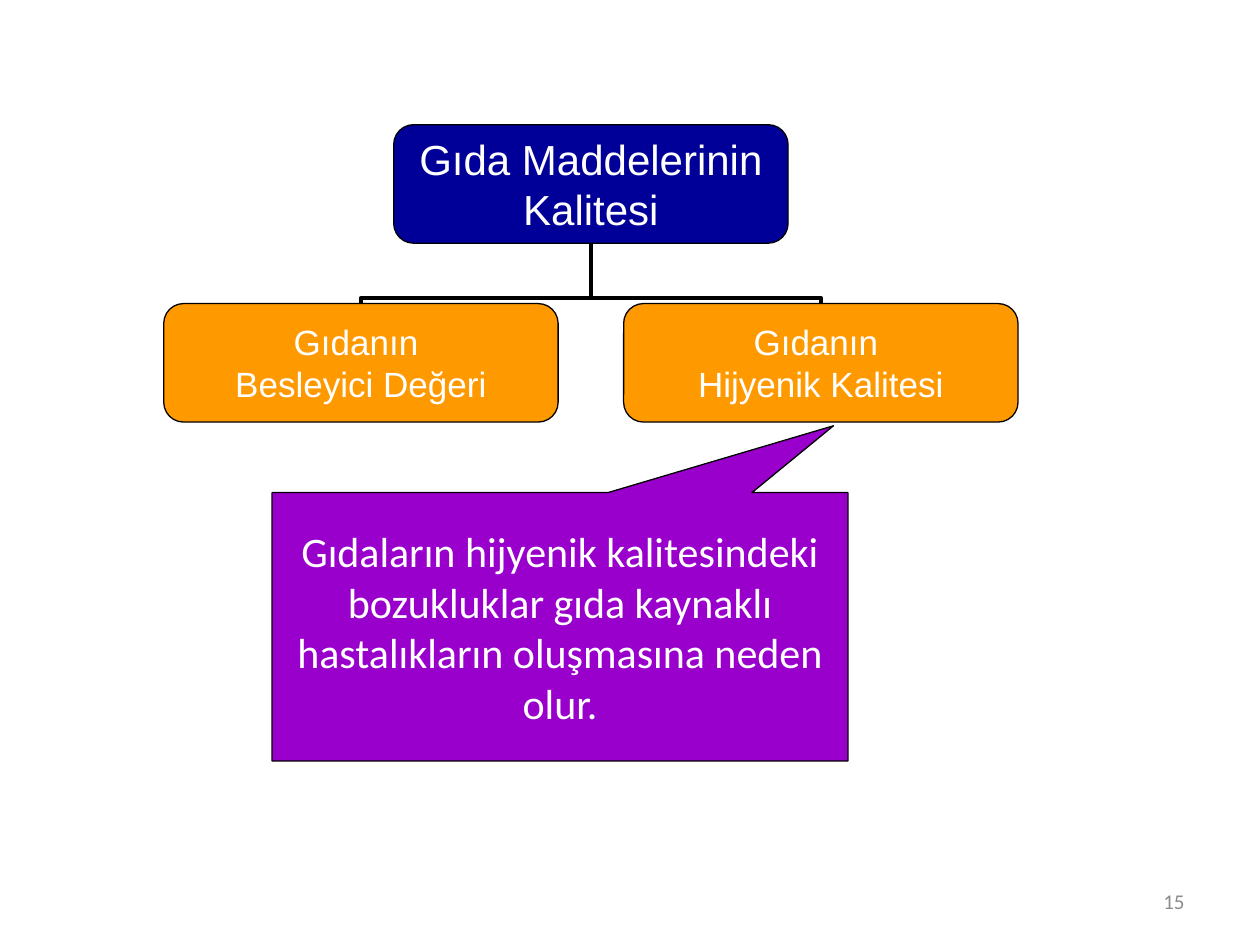
from lxml.etree import SubElement
from pptx import Presentation
from pptx.dml.color import RGBColor
from pptx.enum.shapes import MSO_CONNECTOR, MSO_SHAPE
from pptx.enum.text import MSO_ANCHOR, PP_ALIGN
from pptx.oxml.ns import qn
from pptx.util import Inches, Pt

WIDE, HIGH = 3.13, 0.94      # size of a chart box
LEFT, STEP = 1.3, 3.65       # first box and column pitch
TOP, DROP = 0.99, 1.42       # first row and row pitch


def color(code):
    return RGBColor.from_string(code)


def cell(col, row):
    """Place of a box on the chart grid."""
    return LEFT + col * STEP, TOP + row * DROP, WIDE, HIGH


def write(frame, lines, size, font, ink="FFFFFF", align=PP_ALIGN.CENTER):
    frame.vertical_anchor = MSO_ANCHOR.MIDDLE
    for i, line in enumerate(lines):
        para = frame.paragraphs[0] if i == 0 else frame.add_paragraph()
        para.text = line
        para.alignment = align
        para.font.size = Pt(size)
        para.font.name = font
        para.font.color.rgb = color(ink)


def block(slide, kind, place, fill, adjust):
    shape = slide.shapes.add_shape(kind, *map(Inches, place))
    shape.shadow.inherit = False
    shape.fill.solid()
    shape.fill.fore_color.rgb = color(fill)
    shape.line.color.rgb = color("000000")
    shape.line.width = Pt(0.75)
    for i, value in enumerate(adjust):
        shape.adjustments[i] = value
    shape.text_frame.word_wrap = True
    return shape


def box(slide, place, lines, fill, size):
    shape = block(slide, MSO_SHAPE.ROUNDED_RECTANGLE, place, fill, [0.167])
    frame = shape.text_frame
    frame.margin_left = frame.margin_right = 0
    frame.margin_top = frame.margin_bottom = 0
    frame.word_wrap = False
    write(frame, lines, size, "Arial")


def link(slide, child, parent):
    """Elbow from the top of a child to the foot of its parent."""
    x1, y1 = child[0] + WIDE / 2, child[1]
    x2, y2 = parent[0] + WIDE / 2, parent[1] + HIGH
    midx, midy = (x1 + x2) / 2, (y1 + y2) / 2
    # An elbow starts sideways, so it is laid out turned by a quarter
    across, along = (y1 - y2) / 2, abs(x1 - x2) / 2
    right = x1 > x2
    side = across if right else -across
    line = slide.shapes.add_connector(
        MSO_CONNECTOR.ELBOW, Inches(midx + side), Inches(midy - along),
        Inches(midx - side), Inches(midy + along))
    line.line.color.rgb = color("000000")
    line.line.width = Pt(2.25)
    props = line._element.spPr
    props.find(qn("a:xfrm")).set("rot", str((90 if right else 270) * 60000))
    guides = props.find(qn("a:prstGeom")).find(qn("a:avLst"))
    SubElement(guides, qn("a:gd"), name="adj1", fmla="val 9700")
    SubElement(props, qn("a:effectLst"))


def main():
    deck = Presentation()
    deck.slide_width, deck.slide_height = Inches(10), Inches(7.5)
    slide = deck.slides.add_slide(deck.slide_layouts[6])

    # Hierarchy: links lie behind the boxes
    root = cell(0.5, 0)
    leaves = [(cell(0, 1), "Besleyici Değeri"),
              (cell(1, 1), "Hijyenik Kalitesi")]
    for place, _ in reversed(leaves):
        link(slide, place, root)
    box(slide, root, ["Gıda Maddelerinin", "Kalitesi"], "000099", 24)
    for place, name in leaves:
        box(slide, place, ["Gıdanın ", name], "FF9900", 20)

    # Callout
    note = block(slide, MSO_SHAPE.RECTANGULAR_CALLOUT,
                 (2.16, 3.91, 4.57, 2.13), "9900CC", [0.475, -0.749])
    write(note.text_frame,
          ["Gıdaların hijyenik kalitesindeki bozukluklar gıda kaynaklı "
           "hastalıkların oluşmasına neden olur."], 24, "Calibri")

    # Slide number
    page = slide.shapes.add_textbox(*map(Inches, (7.17, 6.95, 2.33, 0.4)))
    page.text_frame.word_wrap = True
    write(page.text_frame, ["15"], 12, "Calibri", "8C8C8C", PP_ALIGN.RIGHT)

    deck.save("out.pptx")


if __name__ == "__main__":
    main()
